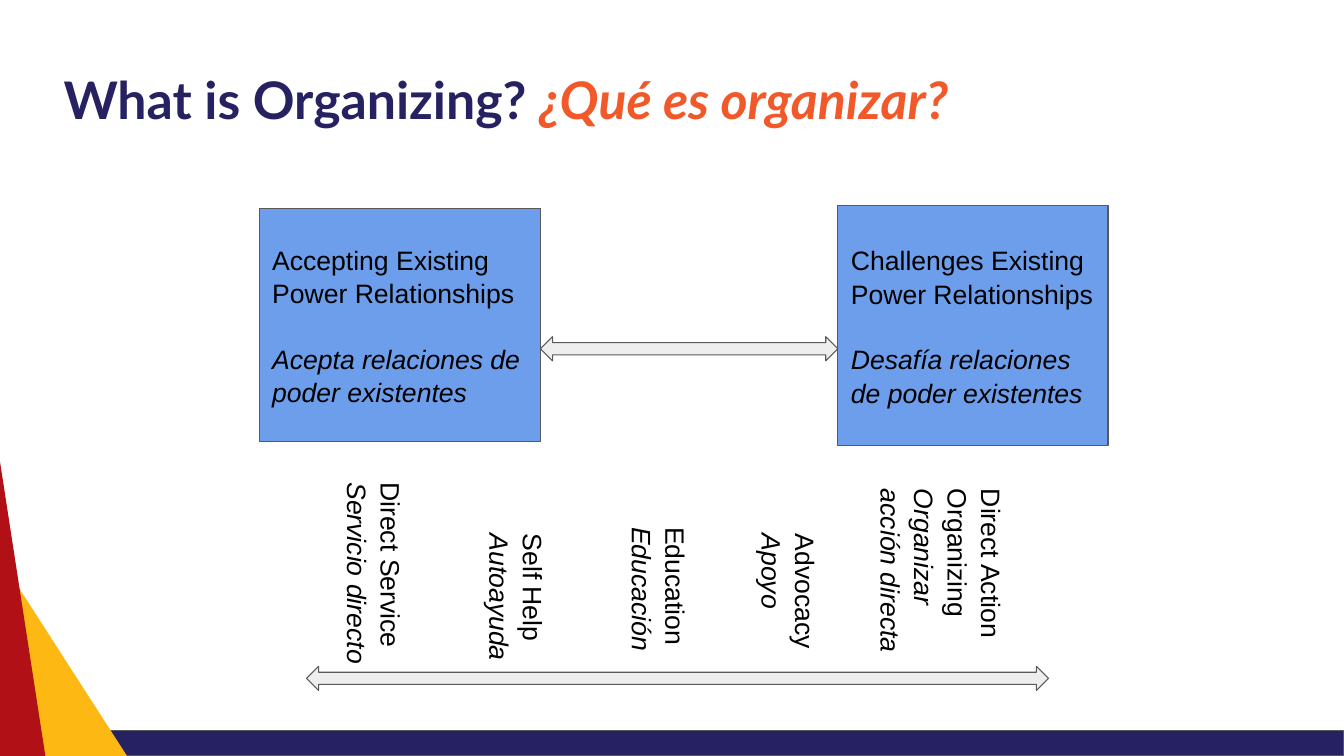
from pptx import Presentation
from pptx import util as u
from pptx.dml.color import RGBColor
from pptx.enum import shapes, text

PX = 9144  # EMU per px, 100 px to the inch
INSET = 13
BODY_SIZE = 19
LINE_SPACING = 1.05
BLANK_LINE = 23  # points between the two languages in a box

NAVY = RGBColor(0x26, 0x22, 0x62)
YELLOW = RGBColor(0xFD, 0xB8, 0x13)
RED = RGBColor(0xB1, 0x11, 0x16)
ORANGE = RGBColor(0xF1, 0x59, 0x2A)
BLUE = RGBColor(0x6D, 0x9E, 0xEB)
PALE_GRAY = RGBColor(0xEE, 0xEE, 0xEE)
DARK_GRAY = RGBColor(0x59, 0x59, 0x59)
BLACK = RGBColor(0, 0, 0)

# English, Spanish, frame (left, top, width, height)
POWER_BOXES = [
    ("Accepting Existing Power Relationships",
     "Acepta relaciones de poder existentes", (257, 207, 279, 231)),
    ("Challenges Existing Power Relationships",
     "Desafía relaciones de poder existentes", (831, 204, 268, 238)),
]
APPROACHES = [
    ("Direct Service", "Servicio directo", (286, 554, 221, 44)),
    ("Self Help", "Autoayuda", (440, 585, 188, 51)),
    ("Education", "Educación", (556, 603, 238, 52)),
    ("Advocacy", "Apoyo", (689, 602, 226, 55)),
    ("Direct Action Organizing", "Organizar acción directa",
     (876, 542, 208, 68)),
]


def to_emu(frame):
    return [u.Emu(px * PX) for px in frame]


def add_shape(slide, kind, frame, fill, outlined=True):
    shape = slide.shapes.add_shape(kind, *to_emu(frame))
    shape.shadow.inherit = False
    shape.fill.solid()
    shape.fill.fore_color.rgb = fill
    if outlined:
        shape.line.color.rgb = DARK_GRAY
        shape.line.width = u.Pt(0.75)
    else:
        shape.line.fill.background()
    return shape


def set_up_text(shape, anchor=text.MSO_ANCHOR.TOP):
    frame = shape.text_frame
    frame.word_wrap = True
    frame.vertical_anchor = anchor
    frame.margin_left = frame.margin_right = u.Emu(INSET * PX)
    frame.margin_top = frame.margin_bottom = u.Emu(INSET * PX)
    return frame


def add_run(paragraph, words, size=BODY_SIZE, font="Arial", color=BLACK,
            bold=False, italic=False):
    run = paragraph.add_run()
    run.text = words
    run.font.size = u.Pt(size)
    run.font.name = font
    run.font.color.rgb = color
    run.font.bold = bold
    run.font.italic = italic


def add_bilingual(frame, english, spanish, gap=0):
    first, second = frame.paragraphs[0], frame.add_paragraph()
    for paragraph in (first, second):
        paragraph.alignment = text.PP_ALIGN.LEFT
        paragraph.line_spacing = LINE_SPACING
    second.space_before = u.Pt(gap)
    add_run(first, english)
    add_run(second, spanish, italic=True)


def add_power_box(slide, english, spanish, frame):
    box = add_shape(slide, shapes.MSO_SHAPE.RECTANGLE, frame, BLUE)
    add_bilingual(set_up_text(box, text.MSO_ANCHOR.MIDDLE),
                  english, spanish, gap=BLANK_LINE)


def add_approach(slide, english, spanish, frame):
    label = slide.shapes.add_textbox(*to_emu(frame))
    label.rotation = 90
    add_bilingual(set_up_text(label), english, spanish)


def add_double_arrow(slide, frame):
    add_shape(slide, shapes.MSO_SHAPE.LEFT_RIGHT_ARROW, frame, PALE_GRAY)


def add_title(slide):
    title = slide.shapes.add_textbox(*to_emu((50, 54, 969, 83)))
    paragraph = set_up_text(title).paragraphs[0]
    style = dict(size=37, font="Lato", bold=True)
    add_run(paragraph, "What is Organizing? ", color=NAVY, **style)
    add_run(paragraph, "¿Qué es organizar?", color=ORANGE, italic=True,
            **style)


def main():
    presentation = Presentation()
    presentation.slide_width, presentation.slide_height = to_emu((1333, 750))
    slide = presentation.slides.add_slide(presentation.slide_layouts[6])

    # Footer bar and corner triangles
    triangle = shapes.MSO_SHAPE.RIGHT_TRIANGLE
    add_shape(slide, shapes.MSO_SHAPE.RECTANGLE, (0, 725, 1333, 25), NAVY)
    add_shape(slide, triangle, (18, 582, 108, 168), YELLOW, outlined=False)
    add_shape(slide, triangle, (0, 458, 45, 292), RED, outlined=False)

    # Two ends of the power spectrum
    for box in POWER_BOXES:
        add_power_box(slide, *box)

    # Approaches along the spectrum
    for approach in APPROACHES:
        add_approach(slide, *approach)

    # Arrows between the boxes and under the approaches
    add_double_arrow(slide, (536, 334, 295, 24))
    add_double_arrow(slide, (304, 661, 736, 24))

    add_title(slide)
    presentation.save("out.pptx")


if __name__ == "__main__":
    main()
